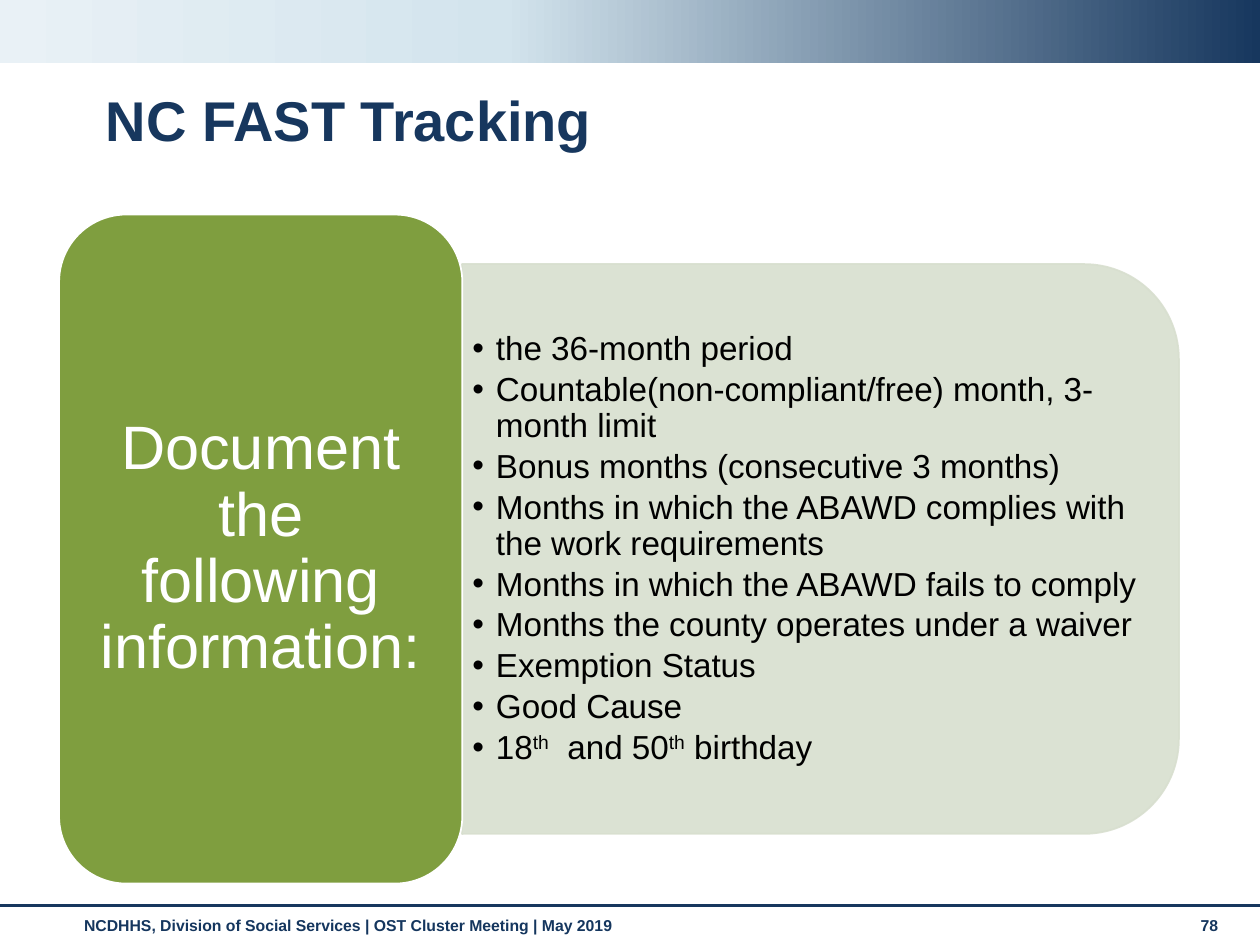
import copy

from lxml import etree
from pptx import Presentation
from pptx import util as u
from pptx.dml.color import RGBColor
from pptx.enum import shapes, text
from pptx.oxml import ns

NAVY = RGBColor(0x17, 0x37, 0x5E)
FOOTER_NAVY = RGBColor(0x15, 0x36, 0x5E)
ICE = RGBColor(0xD3, 0xE4, 0xED)
PALE_ICE = RGBColor(0xE9, 0xF1, 0xF6)
GREEN = RGBColor(0x7F, 0x9E, 0x3F)
SAGE = RGBColor(0xD8, 0xDF, 0xCF)
WHITE = RGBColor(0xFF, 0xFF, 0xFF)
BLACK = RGBColor(0, 0, 0)

ITEMS = [
    ["the 36-month period"],
    ["Countable(non-compliant/free) month, 3-month limit"],
    ["Bonus months (consecutive 3 months)"],
    ["Months in which the ABAWD complies with the work requirements"],
    ["Months in which the ABAWD fails to comply"],
    ["Months the county operates under a waiver"],
    ["Exemption Status"],
    ["Good Cause"],
    ["18", "^th", "  and 50", "^th", " birthday"],
]


class SlideBuilder:
    font = "Arial"

    def __init__(self, page):
        self.page = page

    def place(self, box, bounds):
        box.left, box.top, box.width, box.height = (u.Pt(n) for n in bounds)

    def add_spans(self, para, parts, size, color, bold=False):
        for part in parts:
            span = para.add_run()
            span.text = part.removeprefix("^")
            span.font.name = self.font
            span.font.size = u.Pt(size)
            span.font.bold = bold
            span.font.color.rgb = color
            if part.startswith("^"):
                span.font._element.set("baseline", "30000")

    def frame(self, box, anchor, inset_x=7.2, inset_y=3.6):
        frame = box.text_frame
        frame.word_wrap = True
        frame.auto_size = text.MSO_AUTO_SIZE.NONE
        frame.vertical_anchor = anchor
        frame.margin_left = frame.margin_right = u.Pt(inset_x)
        frame.margin_top = frame.margin_bottom = u.Pt(inset_y)
        return frame

    def title(self, words, bounds):
        box = self.page.shapes.title
        self.place(box, bounds)
        para = self.frame(box, text.MSO_ANCHOR.MIDDLE).paragraphs[0]
        para.alignment = text.PP_ALIGN.LEFT
        para.line_spacing = 0.9
        self.add_spans(para, [words], 32, NAVY, True)

    def textbox(self, bounds, anchor, **insets):
        box = self.page.shapes.add_textbox(*(u.Pt(n) for n in bounds))
        return self.frame(box, anchor, **insets)

    def footer(self, words, bounds):
        frame = self.textbox(bounds, text.MSO_ANCHOR.TOP)
        self.add_spans(frame.paragraphs[0], [words], 9, FOOTER_NAVY, True)

    def heading(self, words, bounds):
        frame = self.textbox(bounds, text.MSO_ANCHOR.MIDDLE, inset_x=10.8, inset_y=5.4)
        para = frame.paragraphs[0]
        para.alignment = text.PP_ALIGN.CENTER
        para.line_spacing = 0.9
        self.add_spans(para, [words], 35, WHITE)

    def bullets(self, items, bounds):
        frame = self.textbox(bounds, text.MSO_ANCHOR.MIDDLE, inset_x=5.76, inset_y=2.88)
        for index, parts in enumerate(items):
            para = frame.add_paragraph() if index else frame.paragraphs[0]
            para.level = 1
            para.line_spacing = 0.9
            para.space_after = u.Pt(2.85)
            props = para._p.get_or_add_pPr()
            props.set("marL", str(u.Pt(13.5)))
            props.set("indent", str(u.Pt(-13.5)))
            etree.SubElement(props, ns.qn("a:buFont"), typeface=self.font)
            etree.SubElement(props, ns.qn("a:buChar"), char="•")
            self.add_spans(para, parts, 19, BLACK)

    def shape(self, kind, bounds):
        box = self.page.shapes.add_shape(kind, *(u.Pt(n) for n in bounds))
        box.shadow.inherit = False
        return box

    def panel(self, kind, bounds, fill, line, opacity=100, rotation=0):
        box = self.shape(kind, bounds)
        box.rotation = rotation
        box.fill.solid()
        box.fill.fore_color.rgb = fill
        box.line.color.rgb = line
        box.line.width = u.Pt(1)
        if opacity < 100:
            for color in box._element.spPr.iter(ns.qn("a:srgbClr")):
                etree.SubElement(color, ns.qn("a:alpha"), val=str(opacity * 1000))

    def gradient_band(self, bounds, colors):
        band = self.shape(shapes.MSO_SHAPE.RECTANGLE, bounds)
        band.line.fill.background()
        band.fill.gradient()
        band.fill.gradient_angle = 180
        stop_list = band._element.spPr.find(".//" + ns.qn("a:gsLst"))
        stop_list.append(copy.deepcopy(stop_list[-1]))
        for stop, (position, color) in zip(band.fill.gradient_stops, colors):
            stop.position = position
            stop.color.rgb = color

    def rule(self, start, end, color, width):
        line = self.page.shapes.add_connector(
            shapes.MSO_CONNECTOR.STRAIGHT, *(u.Pt(n) for n in start + end)
        )
        line.line.color.rgb = color
        line.line.width = u.Pt(width)
        etree.SubElement(line._element.spPr, ns.qn("a:effectLst"))


def main():
    deck = Presentation()
    deck.slide_width, deck.slide_height = u.Pt(720), u.Pt(540)
    page = deck.slides.add_slide(deck.slide_layouts[5])
    builder = SlideBuilder(page)

    builder.footer(
        "NCDHHS, Division of Social Services | OST Cluster Meeting | May 2019",
        (41, 519.8, 629.3, 21),
    )
    builder.footer("78", (679, 519.8, 31.7, 21.6))
    builder.gradient_band((0, 0, 720, 36), [(0, NAVY), (0.6, ICE), (1, PALE_ICE)])
    builder.rule((0, 517.7), (720, 517.7), NAVY, 1.75)
    builder.title("NC FAST Tracking", (53.3, 49, 617.8, 43.2))

    builder.panel(
        shapes.MSO_SHAPE.ROUND_2_SAME_RECTANGLE,
        (306, 108.9, 325.6, 409.7), SAGE, SAGE, opacity=90, rotation=90,
    )
    builder.bullets(ITEMS, (264.2, 167, 393.8, 293.8))
    builder.panel(
        shapes.MSO_SHAPE.ROUNDED_RECTANGLE, (33.8, 122.6, 230.4, 382.3), GREEN, WHITE
    )
    builder.heading("Document the following information:", (45, 133.9, 208, 360))

    deck.save("out.pptx")


if __name__ == "__main__":
    main()
